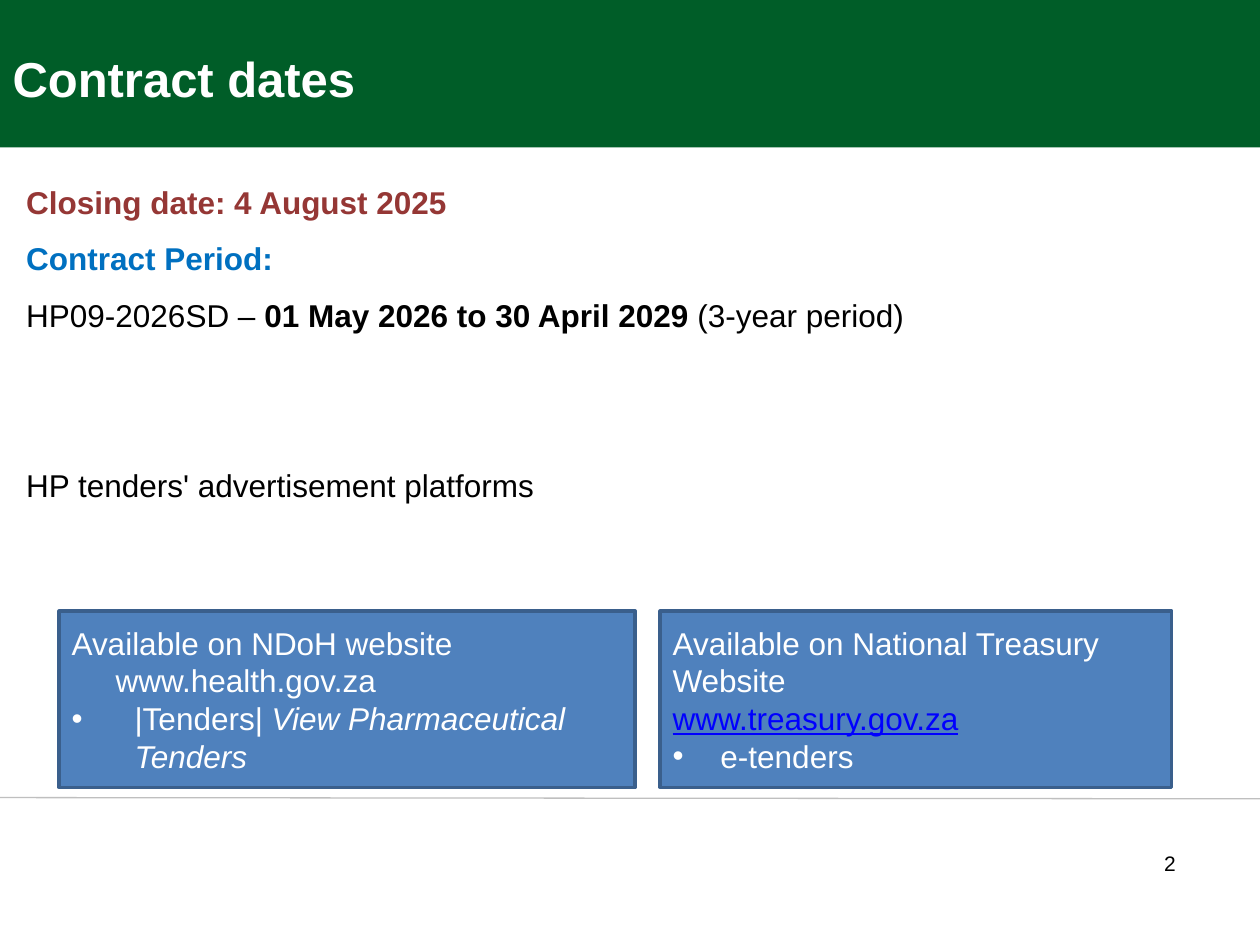
from pptx import Presentation
from pptx.dml.color import RGBColor
from pptx.enum.shapes import MSO_CONNECTOR, MSO_SHAPE
from pptx.enum.text import MSO_ANCHOR, MSO_AUTO_SIZE, PP_ALIGN
from pptx.oxml.ns import qn
from pptx.util import Inches, Pt
from lxml import etree

RECT = MSO_SHAPE.RECTANGLE
STRAIGHT = MSO_CONNECTOR.STRAIGHT
BOTTOM, MIDDLE = MSO_ANCHOR.BOTTOM, MSO_ANCHOR.MIDDLE
NO_FIT = MSO_AUTO_SIZE.NONE
LEFT, RIGHT = PP_ALIGN.LEFT, PP_ALIGN.RIGHT


def tint(code):
    """Turn a hex string into a colour."""
    return RGBColor.from_string(code)


def style(font, size, color, bold=False):
    """Set the face, size, colour and weight of a font."""
    font.name = "Arial"
    font.size = Pt(size)
    font.color.rgb = tint(color)
    font.bold = bold


def add_para(frame, first):
    """Return the first paragraph of a frame, or a new one."""
    return frame.paragraphs[0] if first else frame.add_paragraph()


def add_rect(slide, place, fill, edge=None):
    """Add a flat rectangle, with an outline if an edge colour is given."""
    rect = slide.shapes.add_shape(RECT, *map(Inches, place))
    rect.shadow.inherit = False
    rect.fill.solid()
    rect.fill.fore_color.rgb = tint(fill)
    if edge:
        rect.line.color.rgb = tint(edge)
        rect.line.width = Pt(2)
    else:
        rect.line.fill.background()
    return rect


def add_rule(slide):
    """Add the thin grey line above the footer."""
    rule = slide.shapes.add_connector(
        STRAIGHT, Inches(0), Inches(6.33), Inches(10), Inches(6.34))
    rule.line.color.rgb = tint("BFBFBF")
    rule.line.width = Pt(0.75)
    etree.SubElement(rule._element.spPr, qn("a:effectLst"))


def set_title(slide, text):
    """Fill the title and bring it in front of the band."""
    title = slide.shapes.title
    title.left, title.top = Inches(0), Inches(-0.18)
    title.width, title.height = Inches(6.08), Inches(1.08)
    frame = title.text_frame
    frame.text = text
    frame.auto_size = NO_FIT
    frame.vertical_anchor = BOTTOM
    para = frame.paragraphs[0]
    para.alignment = LEFT
    style(para.font, 28, "FFFFFF", True)
    title._element.getparent().append(title._element)


def add_dates(slide):
    """Add the text on closing date, contract period and platforms."""
    box = slide.shapes.add_textbox(*map(Inches, (0.11, 1.25, 9.79, 3.23)))
    frame = box.text_frame
    frame.word_wrap = True
    rows = [
        ("953735", True, ["Closing date: 4 August 2025"]),
        ("0070C0", True, ["Contract Period:"]),
        ("000000", False, ["HP09-2026SD – ", "01 May 2026 to 30 April 2029 ",
                           "(3-year period)"]),
        ("000000", False, ["HP tenders' advertisement platforms"]),
    ]
    for i, (color, bold, parts) in enumerate(rows):
        para = add_para(frame, i == 0)
        para.line_spacing = 1.5
        style(para.font, 18, color, bold)
        for j, part in enumerate(parts):
            run = para.add_run()
            run.text = part
            if j == 1:
                run.font.bold = True
    para.space_before = Pt(65)


def set_indent(para, left, bullet):
    """Indent a paragraph, with a hanging bullet if asked."""
    props = para._p.get_or_add_pPr()
    props.set("marL", str(Inches(left)))
    if bullet:
        props.set("indent", str(Inches(-left)))
        etree.SubElement(props, qn("a:buFont"), typeface="Arial")
        etree.SubElement(props, qn("a:buChar"), char="•")


def add_card(slide, left, width, rows):
    """Add a blue box that names one website; return its paragraphs."""
    card = add_rect(slide, (left, 4.85, width, 1.4), "4F81BD", "3A5F8C")
    frame = card.text_frame
    frame.vertical_anchor = MIDDLE
    for i, (text, indent, bullet) in enumerate(rows):
        para = add_para(frame, i == 0)
        para.alignment = LEFT
        set_indent(para, indent, bullet)
        style(para.font, 18, "FFFFFF")
        para.add_run().text = text
    return frame.paragraphs


def add_number(slide, text):
    """Add the page number at the lower right."""
    box = slide.shapes.add_textbox(*map(Inches, (8.43, 6.7, 1, 0.3)))
    para = box.text_frame.paragraphs[0]
    box.text_frame.word_wrap = True
    para.text = text
    para.alignment = RIGHT
    style(para.font, 12, "000000")


def main():
    """Build the slide and save it."""
    deck = Presentation()
    deck.slide_width, deck.slide_height = Inches(10), Inches(7.5)
    slide = deck.slides.add_slide(deck.slide_layouts[5])
    add_rect(slide, (0, 0, 10, 1.17), "005D28")
    add_rule(slide)
    set_title(slide, "Contract dates")
    add_dates(slide)
    health = add_card(slide, 0.47, 4.57, [
        ("Available on NDoH website", 0, False),
        ("www.health.gov.za", 0.35, False),
        ("|Tenders| ", 0.5, True),
    ])
    view = health[2].add_run()
    view.text = "View Pharmaceutical Tenders"
    view.font.italic = True
    funds = add_card(slide, 5.24, 4.06, [
        ("Available on National Treasury Website", 0, False),
        ("www.treasury.gov.za", 0, False),
        ("e-tenders", 0.38, True),
    ])
    site = funds[1].font
    site.color.rgb = tint("0000FF")
    site.underline = True
    add_number(slide, "2")
    deck.save("out.pptx")


if __name__ == "__main__":
    main()
